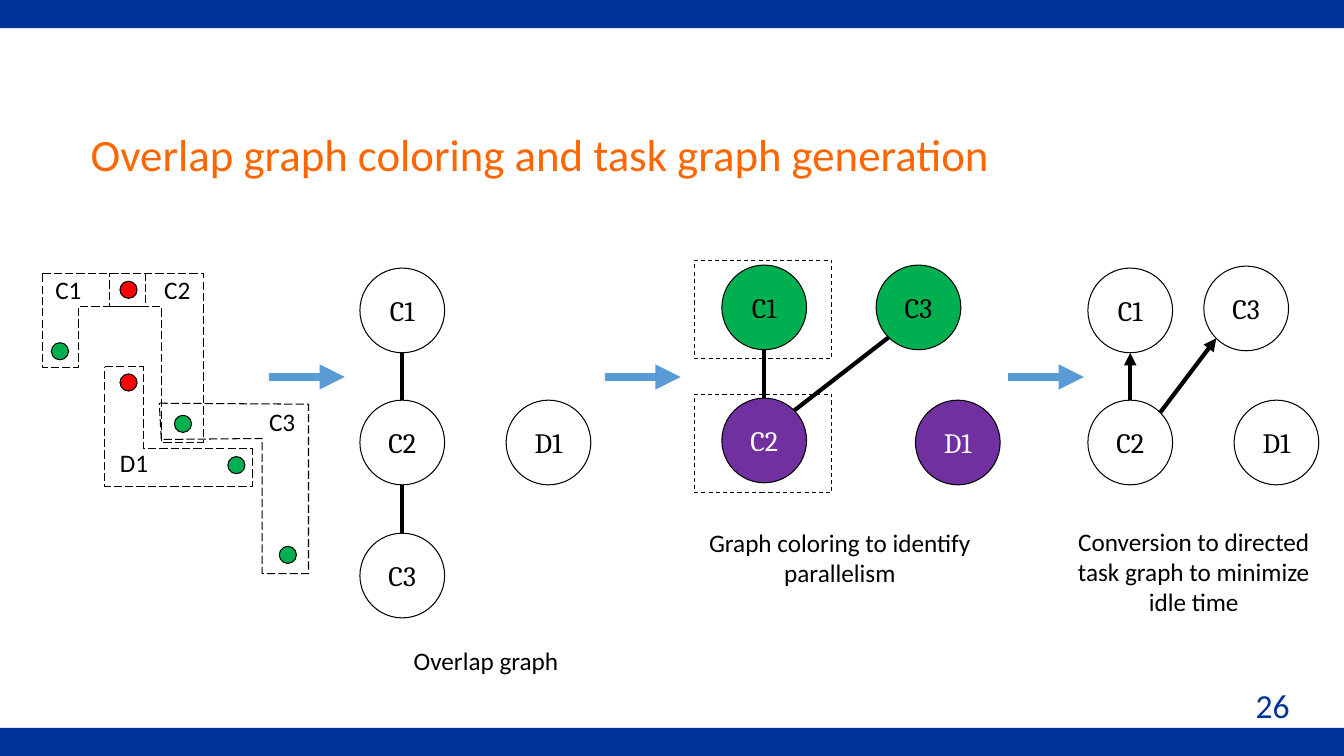
from dataclasses import dataclass
from math import sqrt

from pptx import Presentation
from pptx.dml.color import RGBColor
from pptx.enum.dml import MSO_LINE
from pptx.enum.shapes import MSO_CONNECTOR, MSO_SHAPE
from pptx.enum.text import MSO_ANCHOR, MSO_AUTO_SIZE, PP_ALIGN
from pptx.oxml.ns import qn
from pptx.util import Inches, Pt
from lxml.etree import SubElement


@dataclass(frozen=True)
class Theme:
    navy: str = "003399"
    orange: str = "FF6600"
    blue: str = "5B9BD5"
    green: str = "00B050"
    purple: str = "7030A0"
    red: str = "FF0000"
    black: str = "000000"
    white: str = "FFFFFF"
    sans: str = "Calibri"
    serif: str = "Cambria"
    title: int = 32
    number: int = 24
    node: int = 20
    label: int = 18
    thin: float = 0.75
    edge: int = 3
    arrow: int = 6


T = Theme()
WIDE, HIGH, BAR = 13.33, 7.5, 0.28
NODE, DOT = 0.84, 0.17
STEP_Y, STEP_W = 3.74, 0.75

TITLE = "Overlap graph coloring and task graph generation"
NUMBER = "26"

# Corner points of each routed region
REGIONS = [
    [(0.42, 2.71), (1.44, 2.71), (1.44, 3.04), (0.78, 3.04), (0.78, 3.65), (0.42, 3.65)],
    [(1.09, 2.71), (2.02, 2.71), (2.02, 4.39), (1.6, 4.39), (1.6, 3.04), (1.09, 3.04)],
    [(1.04, 3.64), (1.42, 3.64), (1.42, 4.45), (2.5, 4.45), (2.5, 4.83), (1.04, 4.83)],
    [(1.58, 4), (3.06, 4.01), (3.06, 5.69), (2.6, 5.69), (2.6, 4.35), (1.6, 4.36)],
]
DOTS = [
    (1.19, 2.79, T.red), (1.19, 3.71, T.red), (0.51, 3.4, T.green),
    (1.73, 4.12, T.green), (2.26, 4.53, T.green), (2.77, 5.42, T.green),
]
LABELS = [("C1", 0.45, 2.67), ("C2", 1.53, 2.67), ("C3", 2.57, 3.98), ("D1", 1.09, 4.39)]
STEPS = [2.67, 6, 10]
CAPTIONS = [
    ("Overlap graph", 3.4, 6.35, 0.4),
    ("Graph coloring to identify parallelism", 6.91, 5.18, 0.71),
    ("Conversion to directed task graph to minimize idle time", 10.42, 5.17, 1.01),
]
FRAMES = [(6.89, 2.58, 1.36, 0.98), (6.89, 3.91, 1.36, 0.98)]

# Nodes are name: (left, top, fill); edges are (from, side, to, side)
GRAPHS = [
    {"nodes": {"C1": (3.57, 2.66, None), "C2": (3.57, 3.97, None),
               "C3": (3.57, 5.29, None), "D1": (5.02, 3.97, None)},
     "edges": [("C1", "s", "C2", "n"), ("C2", "s", "C3", "n")],
     "head": False},
    {"nodes": {"C1": (7.16, 2.63, T.green), "C2": (7.16, 3.95, T.purple),
               "C3": (8.69, 2.63, T.green), "D1": (9.08, 3.97, T.purple)},
     "edges": [("C1", "s", "C2", "n"), ("C3", "sw", "C2", "ne")],
     "head": False},
    {"nodes": {"C1": (10.79, 2.66, None), "C2": (10.79, 3.97, None),
               "C3": (11.94, 2.64, None), "D1": (12.24, 3.97, None)},
     "edges": [("C2", "n", "C1", "s"), ("C2", "ne", "C3", "sw")],
     "head": True},
]
DIAG = sqrt(0.5)
SIDES = {"n": (0, -1), "s": (0, 1), "ne": (DIAG, -DIAG), "sw": (-DIAG, DIAG)}


def tint(name):
    return RGBColor.from_string(name)


def write(shape, text, size=T.label, font=T.sans, color=T.black,
          align=PP_ALIGN.LEFT, anchor=MSO_ANCHOR.TOP):
    frame = shape.text_frame
    frame.auto_size = MSO_AUTO_SIZE.NONE
    frame.word_wrap = True
    frame.vertical_anchor = anchor
    para = frame.paragraphs[0]
    para.alignment = align
    run = para.add_run()
    run.text = text
    run.font.size, run.font.name = Pt(size), font
    run.font.color.rgb = tint(color)


def place(shape, *box):
    shape.left, shape.top, shape.width, shape.height = map(Inches, box)


def label(slide, text, *box, **form):
    write(slide.shapes.add_textbox(*map(Inches, box)), text, **form)


def dress(shape, fill=None, line=T.black, dash=None):
    shape.shadow.inherit = False
    if fill:
        shape.fill.solid()
        shape.fill.fore_color.rgb = tint(fill)
    else:
        shape.fill.background()
    if not line:
        shape.line.fill.background()
        return
    shape.line.color.rgb = tint(line)
    shape.line.width = Pt(T.thin)
    if dash:
        shape.line.dash_style = dash


def draw(slide, kind, *box, **look):
    shape = slide.shapes.add_shape(kind, *map(Inches, box))
    dress(shape, **look)
    return shape


def outline(slide, points):
    first, *rest = [(Inches(x), Inches(y)) for x, y in points]
    pen = slide.shapes.build_freeform(*first)
    pen.add_line_segments(rest, close=True)
    dress(pen.convert_to_shape(), dash=MSO_LINE.LONG_DASH)


def link(slide, start, end, color=T.black, width=T.edge, head=False):
    line = slide.shapes.add_connector(
        MSO_CONNECTOR.STRAIGHT, *map(Inches, (*start, *end)))
    line.line.color.rgb = tint(color)
    line.line.width = Pt(width)
    if head:
        SubElement(line.line._get_or_add_ln(), qn("a:tailEnd"), type="triangle")
    SubElement(line._element.spPr, qn("a:effectLst"))


def rim(node, side):
    """Return the point where an edge meets the circle of a node."""
    radius = NODE / 2
    return [at + radius * (1 + part) for at, part in zip(node, SIDES[side])]


def graph(slide, nodes, edges, head):
    for name, (left, top, fill) in nodes.items():
        circle = draw(slide, MSO_SHAPE.OVAL, left, top, NODE, NODE, fill=fill)
        write(circle, name, size=T.node, font=T.serif,
              color=T.white if fill == T.purple else T.black,
              align=PP_ALIGN.CENTER, anchor=MSO_ANCHOR.MIDDLE)
    for first, out, last, into in edges:
        link(slide, rim(nodes[first], out), rim(nodes[last], into), head=head)


def main():
    deck = Presentation()
    deck.slide_width, deck.slide_height = Inches(WIDE), Inches(HIGH)
    slide = deck.slides.add_slide(deck.slide_layouts[5])

    for top in (HIGH - BAR, 0):
        draw(slide, MSO_SHAPE.RECTANGLE, 0, top, WIDE, BAR, fill=T.navy, line=None)
    title = slide.shapes.title
    place(title, 0.8, 0.9, 9.51, 1.25)
    write(title, TITLE, size=T.title, color=T.orange, anchor=MSO_ANCHOR.MIDDLE)
    label(slide, NUMBER, 10.11, 6.75, 2.78, 0.5,
          size=T.number, color=T.navy, align=PP_ALIGN.RIGHT)

    for left, top, fill in DOTS:
        draw(slide, MSO_SHAPE.OVAL, left, top, DOT, DOT, fill=fill)
    for points in REGIONS:
        outline(slide, points)
    for text, left, top in LABELS:
        label(slide, text, left, top, 0.52, 0.42)

    for left in STEPS:
        link(slide, (left, STEP_Y), (left + STEP_W, STEP_Y),
             color=T.blue, width=T.arrow, head=True)
    for text, left, top, high in CAPTIONS:
        label(slide, text, left, top, 2.84, high, align=PP_ALIGN.CENTER)
    for box in FRAMES:
        draw(slide, MSO_SHAPE.RECTANGLE, *box, dash=MSO_LINE.DASH)
    for item in GRAPHS:
        graph(slide, **item)

    deck.save("out.pptx")


if __name__ == "__main__":
    main()
